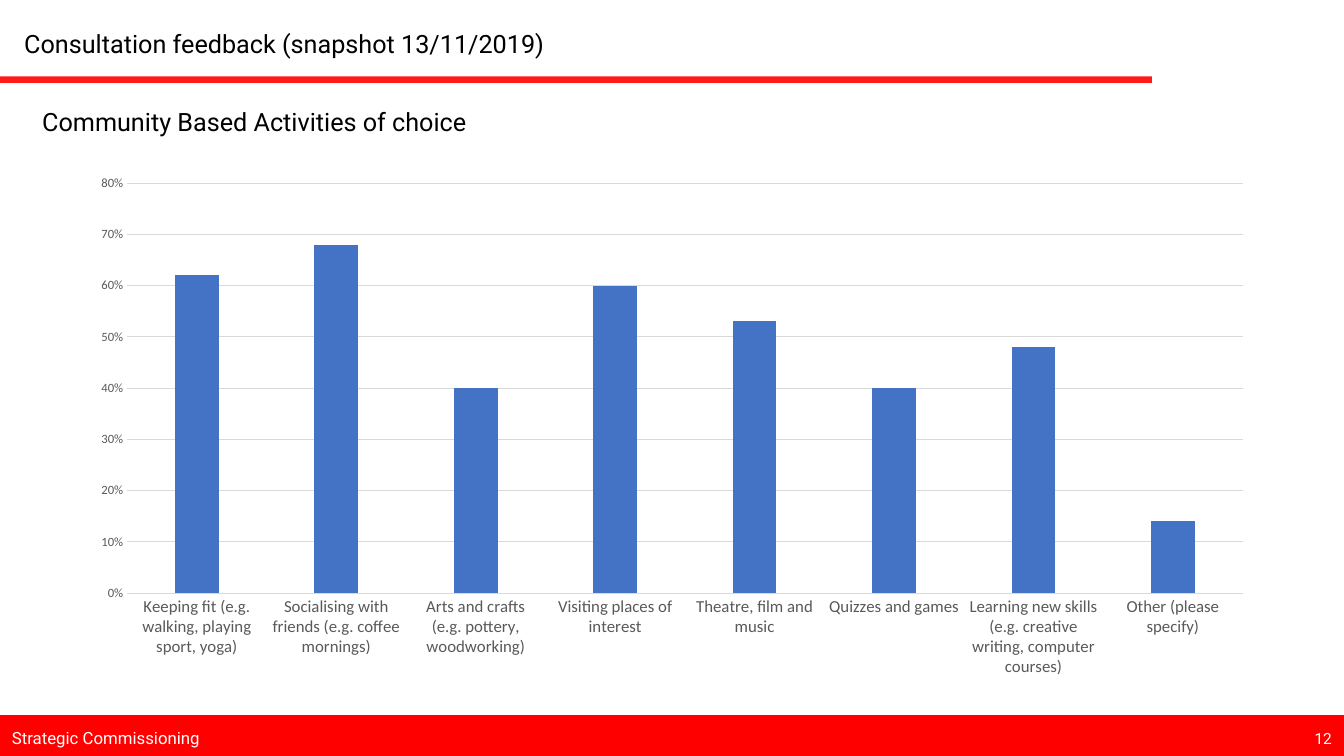
from pptx import Presentation
from pptx.chart.data import CategoryChartData
from pptx.dml.color import RGBColor
from pptx.enum.chart import XL_CHART_TYPE as ChartType, XL_TICK_MARK as TickMark
from pptx.enum.shapes import MSO_CONNECTOR as Connector, MSO_SHAPE as Shape
from pptx.enum.text import MSO_ANCHOR as Anchor, MSO_AUTO_SIZE as AutoSize, PP_ALIGN as Align
from pptx.oxml.ns import qn
from pptx.util import Inches, Pt
from lxml.etree import SubElement

HEADING = "Consultation feedback (snapshot 13/11/2019)"
SUBHEADING = "Community Based Activities of choice"
DEPARTMENT = "Strategic Commissioning"
PAGE = "12"
ACTIVITIES = [
    ("Keeping fit (e.g. walking, playing sport, yoga)", 0.62),
    ("Socialising with friends (e.g. coffee mornings)", 0.68),
    ("Arts and crafts (e.g. pottery, woodworking)", 0.40),
    ("Visiting places of interest", 0.60),
    ("Theatre, film and music", 0.53),
    ("Quizzes and games", 0.40),
    ("Learning new skills (e.g. creative writing, computer courses)", 0.48),
    ("Other (please specify)", 0.14),
]

WIDTH, HEIGHT = 13.33, 7.5
FOOTER_HEIGHT = 0.4
FOOTER_TOP = HEIGHT - FOOTER_HEIGHT
RULE_WIDTH = WIDTH * 6 / 7
RED, BLACK, WHITE, GREY, PALE, BLUE = "FF0000", "000000", "FFFFFF", "595959", "D9D9D9", "4472C4"


def color(hex_code):
    return RGBColor.from_string(hex_code)


def style(font, name, size, hex_code):
    font.name, font.size = name, Pt(size)
    font.color.rgb = color(hex_code)


def place(holder, left, top, width, height):
    holder.left, holder.top = Inches(left), Inches(top)
    holder.width, holder.height = Inches(width), Inches(height)


def write(holder, text, size, hex_code, anchor=Anchor.TOP):
    frame = holder.text_frame
    frame.word_wrap, frame.auto_size = True, AutoSize.NONE
    frame.vertical_anchor = anchor
    paragraph = frame.paragraphs[0]
    paragraph.alignment = Align.LEFT
    run = paragraph.add_run()
    run.text = text
    style(run.font, "Roboto", size, hex_code)


def add_label(slide, box, *text_style):
    write(slide.shapes.add_textbox(*map(Inches, box)), *text_style)


def add_frame(slide):
    """Red footer band and the translucent rule under the heading."""
    band = slide.shapes.add_shape(
        Shape.RECTANGLE, 0, Inches(FOOTER_TOP), Inches(WIDTH), Inches(FOOTER_HEIGHT))
    band.shadow.inherit = False
    band.fill.solid()
    band.fill.fore_color.rgb = band.line.color.rgb = color(RED)
    band.line.width = Pt(1)

    rule = slide.shapes.add_connector(
        Connector.STRAIGHT, 0, Inches(0.79), Inches(RULE_WIDTH), Inches(0.79))
    rule.line.color.rgb, rule.line.width = color(RED), Pt(4.5)
    properties = rule._element.spPr
    SubElement(next(properties.iter(qn("a:srgbClr"))), qn("a:alpha"), val="90000")
    SubElement(properties, qn("a:effectLst"))


def add_activity_chart(slide):
    data = CategoryChartData(number_format="0%")
    names, shares = zip(*ACTIVITIES)
    data.categories = names
    data.add_series("Series 1", shares)
    chart = slide.shapes.add_chart(
        ChartType.COLUMN_CLUSTERED, *map(Inches, (0.77, 1.64, 11.79, 5.18)), data).chart
    chart.has_legend = chart.has_title = False
    style(chart.font, "Calibri", 10, BLACK)

    plot = chart.plots[0]
    plot.gap_width, plot.overlap, plot.vary_by_categories = 219, -27, False
    columns = plot.series[0].format.fill
    columns.solid()
    columns.fore_color.rgb = color(BLUE)

    activity_axis, share_axis = chart.category_axis, chart.value_axis
    for axis, size in ((activity_axis, 12), (share_axis, 9)):
        axis.major_tick_mark = axis.minor_tick_mark = TickMark.NONE
        style(axis.tick_labels.font, "Calibri", size, GREY)
    share_axis.minimum_scale, share_axis.maximum_scale, share_axis.major_unit = 0, 0.8, 0.1
    share_axis.tick_labels.number_format = "0%"
    share_axis.tick_labels.number_format_is_linked = False
    share_axis.format.line.fill.background()
    for line in (activity_axis.format.line, share_axis.major_gridlines.format.line):
        line.color.rgb, line.width = color(PALE), Pt(0.75)


def main():
    deck = Presentation()
    deck.slide_width, deck.slide_height = Inches(WIDTH), Inches(HEIGHT)
    slide = deck.slides.add_slide(deck.slide_layouts.get_by_name("Title Only"))
    add_frame(slide)
    heading = slide.shapes.title
    place(heading, 0.14, 0.23, RULE_WIDTH, 0.4)
    write(heading, HEADING, 18, BLACK)
    add_label(slide, (0.32, 1.01, 11.09, 0.4), SUBHEADING, 18, BLACK)
    add_label(slide, (0.02, FOOTER_TOP + 0.02, 2.33, FOOTER_HEIGHT),
              DEPARTMENT, 12, WHITE, Anchor.MIDDLE)
    add_label(slide, (12.94, 7.18, 0.4, 0.29), PAGE, 11, WHITE)
    add_activity_chart(slide)
    deck.save("out.pptx")


if __name__ == "__main__":
    main()
